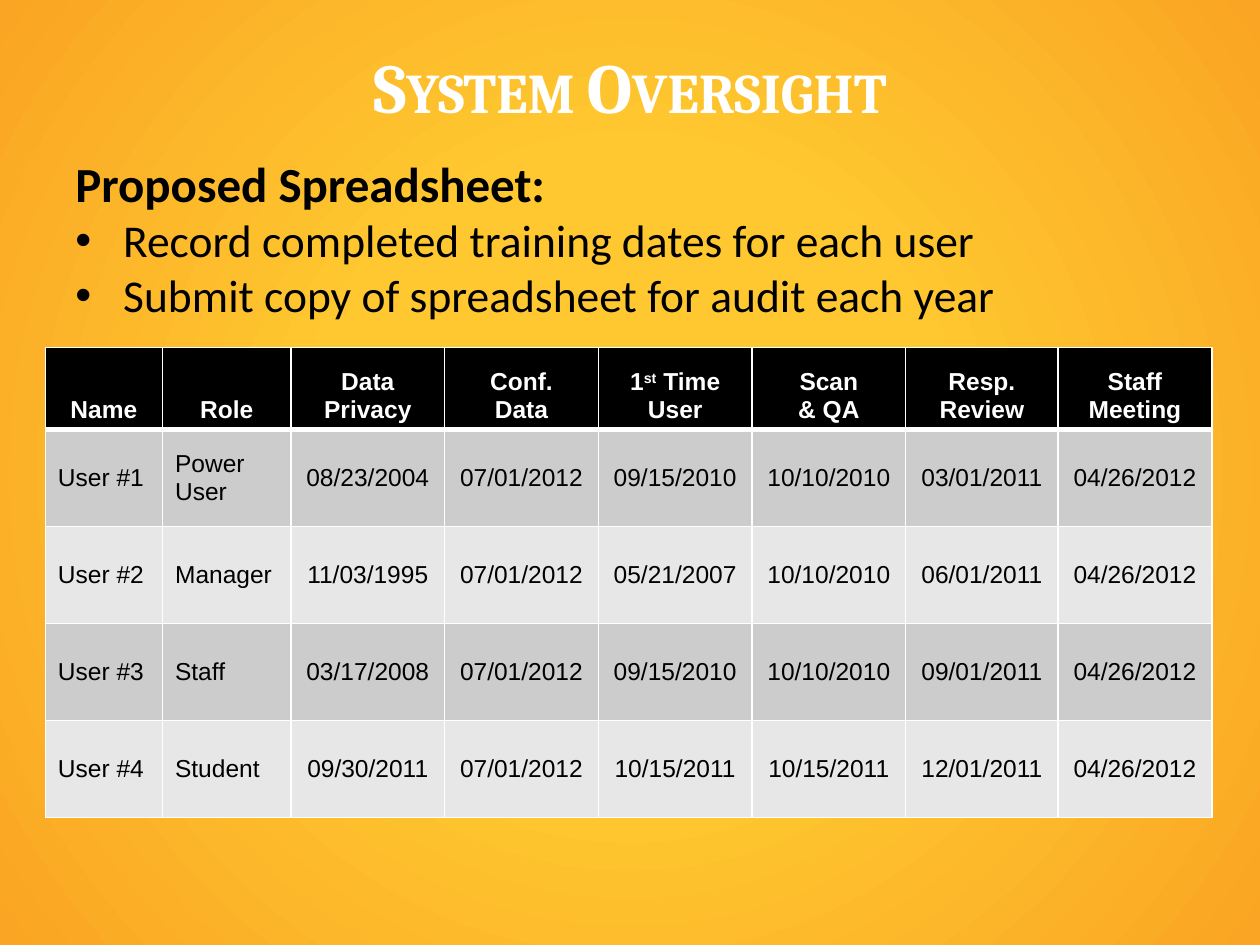
from pptx import Presentation
from pptx.dml.color import RGBColor
from pptx.enum.text import MSO_ANCHOR, PP_ALIGN
from pptx.oxml import parse_xml
from pptx.oxml.ns import nsdecls, qn
from pptx.util import Inches, Pt

LEFT, CENTER = PP_ALIGN.LEFT, PP_ALIGN.CENTER
MIDDLE, BOTTOM = MSO_ANCHOR.MIDDLE, MSO_ANCHOR.BOTTOM

COLORS = {
    "glow": "FFC830",
    "edge": "FAA523",
    "white": "FFFFFF",
    "black": "000000",
    "dark_band": "CCCCCC",
    "light_band": "E7E7E7",
}

BULLETS = [
    "Record completed training dates for each user",
    "Submit copy of spreadsheet for audit each year",
]
HEADINGS = [
    "Name", "Role", "Data\nPrivacy", "Conf.\nData", "1^st^ Time\nUser",
    "Scan\n& QA", "Resp.\nReview", "Staff\nMeeting",
]
USERS = [
    ["User #1", "Power\nUser", "08/23/2004", "07/01/2012", "09/15/2010",
     "10/10/2010", "03/01/2011", "04/26/2012"],
    ["User #2", "Manager", "11/03/1995", "07/01/2012", "05/21/2007",
     "10/10/2010", "06/01/2011", "04/26/2012"],
    ["User #3", "Staff", "03/17/2008", "07/01/2012", "09/15/2010",
     "10/10/2010", "09/01/2011", "04/26/2012"],
    ["User #4", "Student", "09/30/2011", "07/01/2012", "10/15/2011",
     "10/15/2011", "12/01/2011", "04/26/2012"],
]
COLUMN_WIDTHS = [0.93, 1.02, 1.22, 1.22, 1.22, 1.22, 1.21, 1.22]
ROW_HEIGHTS = [0.65] + [0.77] * len(USERS)


def add_text(para, text, *, size, font, color="black", bold=False,
             align=LEFT, small_caps=False):
    """Write text into a paragraph; parts between carets are superscript."""
    para.alignment = align
    for index, part in enumerate(text.split("^")):
        span = para.add_run()
        span.text = part
        span.font.size = Pt(size)
        span.font.name = font
        span.font.bold = bold
        span.font.color.rgb = RGBColor.from_string(COLORS[color])
        properties = span._r.get_or_add_rPr()
        if small_caps:
            properties.set("cap", "small")
        if index % 2:
            properties.set("baseline", "30000")


def add_bullet(para, indent):
    """Give a paragraph a round bullet with a hanging indent."""
    properties = para._p.get_or_add_pPr()
    properties.set("marL", str(indent))
    properties.set("indent", str(-indent))
    properties.append(parse_xml(f'<a:buFont {nsdecls("a")} typeface="Arial"/>'))
    properties.append(parse_xml(f'<a:buChar {nsdecls("a")} char="•"/>'))


def paint_background(page):
    """Fill the page with a gradient that glows from the centre."""
    page.background.fill.gradient()
    gradient = page._element.find(".//" + qn("a:gradFill"))
    gradient.getparent().replace(gradient, parse_xml(
        f'<a:gradFill {nsdecls("a")} rotWithShape="1"><a:gsLst>'
        f'<a:gs pos="40000"><a:srgbClr val="{COLORS["glow"]}"/></a:gs>'
        f'<a:gs pos="100000"><a:srgbClr val="{COLORS["edge"]}"/></a:gs>'
        '</a:gsLst><a:path path="circle">'
        '<a:fillToRect l="50000" t="50000" r="50000" b="50000"/>'
        '</a:path></a:gradFill>'))


def place_title(page, left, top, width, height):
    """Move and format the title placeholder."""
    title = page.shapes.title
    title.left, title.top, title.width, title.height = left, top, width, height
    title.text_frame.vertical_anchor = MIDDLE
    add_text(title.text_frame.paragraphs[0], "System Oversight", size=40,
             font="Cambria", color="white", bold=True, align=CENTER,
             small_caps=True)


def place_proposal(page, left, top, width, height):
    """Place the lead line and its bullets."""
    frame = page.shapes.add_textbox(left, top, width, height).text_frame
    frame.word_wrap = True
    add_text(frame.paragraphs[0], "Proposed Spreadsheet:", size=28,
             font="Calibri", bold=True)
    for bullet in BULLETS:
        para = frame.add_paragraph()
        add_bullet(para, Inches(0.38))
        add_text(para, bullet, size=26, font="Calibri")


def set_borders(cell, top, bottom):
    """Draw white cell borders with the given top and bottom widths."""
    for side, width in (("L", 1), ("R", 1), ("T", top), ("B", bottom)):
        cell._tc.get_or_add_tcPr().append(parse_xml(
            f'<a:ln{side} {nsdecls("a")} w="{Pt(width)}"><a:solidFill>'
            f'<a:srgbClr val="{COLORS["white"]}"/></a:solidFill></a:ln{side}>'))


def fill_cell(cell, text, row, column):
    """Format one cell by its place in the table and write its text."""
    header = row == 0
    band = "black" if header else "dark_band" if row % 2 else "light_band"
    set_borders(cell, top=3 if row == 1 else 1, bottom=3 if header else 1)
    cell.fill.solid()
    cell.fill.fore_color.rgb = RGBColor.from_string(COLORS[band])
    cell.vertical_anchor = BOTTOM if header else MIDDLE
    for index, line in enumerate(text.split("\n")):
        frame = cell.text_frame
        para = frame.add_paragraph() if index else frame.paragraphs[0]
        add_text(para, line, size=14, font="Arial", bold=header,
                 color="white" if header else "black",
                 align=CENTER if header or column > 1 else LEFT)


def place_training_table(page, left, top, width, height):
    """Place the table of training dates."""
    records = [HEADINGS] + USERS
    table = page.shapes.add_table(len(records), len(HEADINGS), left, top,
                                  width, height).table
    for column, inches in zip(table.columns, COLUMN_WIDTHS):
        column.width = Inches(inches)
    for row, inches in zip(table.rows, ROW_HEIGHTS):
        row.height = Inches(inches)
    for row, record in enumerate(records):
        for column, text in enumerate(record):
            fill_cell(table.cell(row, column), text, row, column)


def main():
    """Build the deck and save it."""
    deck = Presentation()
    deck.slide_width, deck.slide_height = Inches(10), Inches(7.5)
    page = deck.slides.add_slide(deck.slide_layouts[5])
    paint_background(page)
    place_title(page, Inches(0.5), Inches(0.3), Inches(9), Inches(0.76))
    place_proposal(page, Inches(0.5), Inches(1.17), Inches(9), Inches(5.42))
    place_training_table(page, Inches(0.36), Inches(2.76),
                         Inches(sum(COLUMN_WIDTHS)), Inches(sum(ROW_HEIGHTS)))
    deck.save("out.pptx")


if __name__ == "__main__":
    main()
